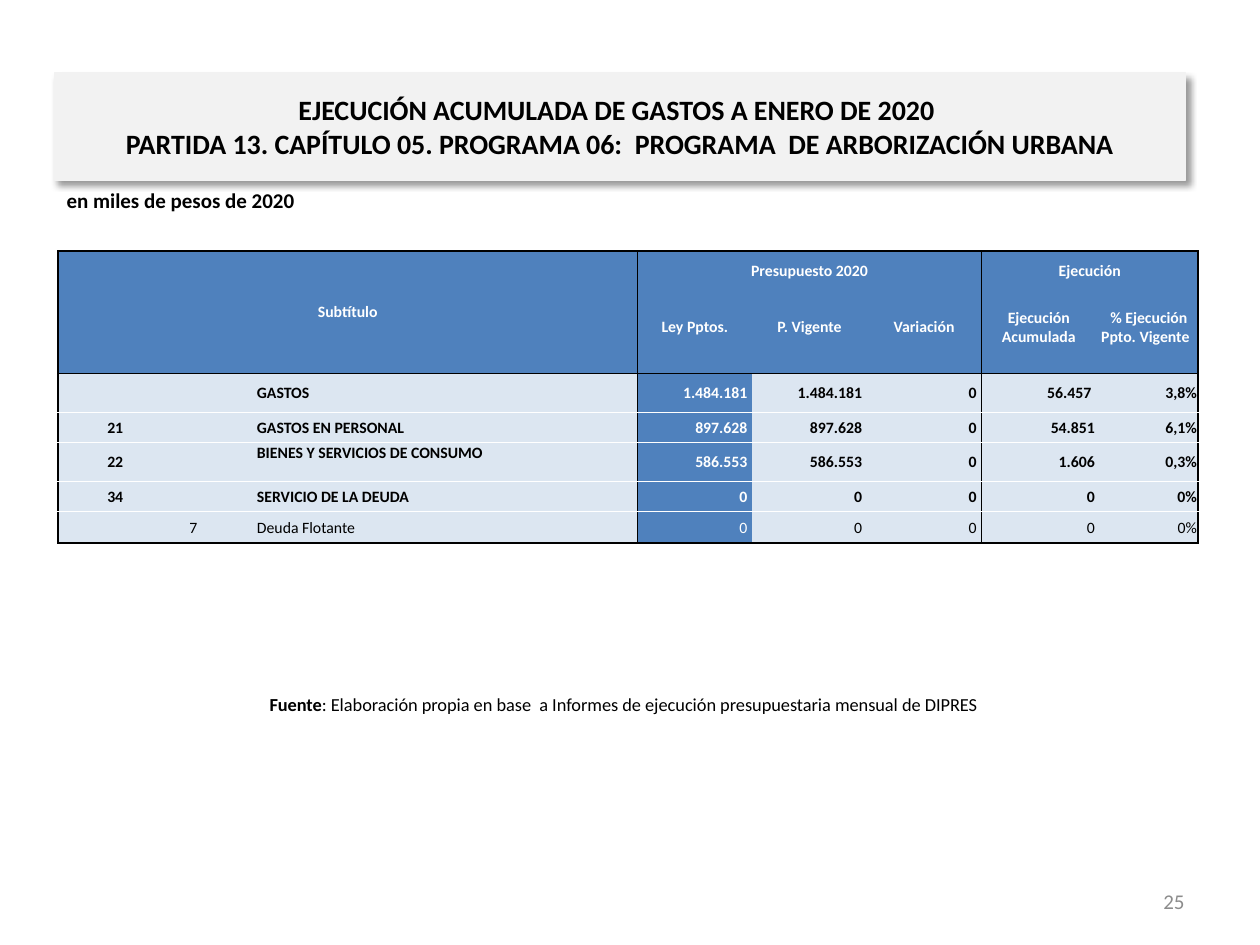
from dataclasses import dataclass

from lxml.etree import SubElement
from pptx import Presentation
from pptx.dml.color import RGBColor as RGB
from pptx.enum.text import MSO_ANCHOR as ANCHOR, MSO_AUTO_SIZE as FIT, PP_ALIGN as ALIGN
from pptx.oxml import parse_xml
from pptx.oxml.ns import nsdecls, qn
from pptx.util import Inches, Pt


@dataclass(frozen=True)
class Theme:
    """Colours, font and type sizes of the slide."""
    font: str = "Calibri"
    black: str = "000000"
    white: str = "FFFFFF"
    grey: str = "8C8C8C"
    panel: str = "F2F2F2"
    blue: str = "4F81BD"
    pale: str = "DCE6F1"
    title: float = 16
    body: float = 12
    source: float = 10.5
    cell: float = 9


THEME = Theme()
COLS = [0.91, 0.33, 0.33, 3.03, 0.91, 0.91, 0.91, 0.91, 0.81]
ROWS = [0.24, 0.73, 0.31, 0.24, 0.31, 0.24, 0.25]
HEADER_ROWS = 2
NAME_COL, LAW_COL = 3, 4
SPANS = [(0, 0, 1, 3), (0, 4, 0, 6), (0, 7, 0, 8)]
DATA = [
    ["Subtítulo", "", "", "", "Presupuesto 2020", "", "", "Ejecución", ""],
    ["", "", "", "", "Ley Pptos.", "P. Vigente", "Variación",
     "Ejecución Acumulada", " % Ejecución Ppto. Vigente "],
    ["", "", "", "GASTOS", "1.484.181 ", "1.484.181 ", "0 ", "56.457 ", "3,8%"],
    ["21", "", "", "GASTOS EN PERSONAL", "897.628 ", "897.628 ", "0 ", "54.851", "6,1%"],
    ["22", "", "", "BIENES Y SERVICIOS DE CONSUMO", "586.553 ", "586.553 ", "0 ", "1.606", "0,3%"],
    ["34", "", "", "SERVICIO DE LA DEUDA", "0 ", "0 ", "0 ", "0", "0%"],
    ["", "7", "", "Deuda Flotante", "0 ", "0 ", "0 ", "0", "0%"],
]
DETAIL_ROW = 6
WRAPPED_ROW = 4
OUTER, INNER, RULE = (THEME.black, 1), (THEME.black, 0.5), (THEME.white, 0.5)
V_EDGES = {0: OUTER, 4: INNER, 7: INNER, 9: OUTER}
H_EDGES = {0: OUTER, 2: INNER, 3: RULE, 4: RULE, 5: RULE, 6: RULE, 7: OUTER}


def write(tf, text, size, color=THEME.black, bold=False, align=ALIGN.LEFT, anchor=ANCHOR.MIDDLE):
    """Add formatted text to the first paragraph of a text frame."""
    tf.word_wrap = True
    tf.vertical_anchor = anchor
    p = tf.paragraphs[0]
    p.alignment = align
    if not text:
        SubElement(p._p, qn("a:endParaRPr"), sz=str(int(size * 100)))
        return
    for i, part in enumerate(text.split("\n")):
        if i:
            p.add_line_break()
        r = p.add_run()
        r.text = part
        r.font.name, r.font.size, r.font.bold = THEME.font, Pt(size), bold
        r.font.color.rgb = RGB.from_string(color)


def set_borders(cell, edges):
    """Draw the left, right, top and bottom borders of a cell."""
    tc_pr = cell._tc.get_or_add_tcPr()
    for i, (side, edge) in enumerate(zip("LRTB", edges)):
        color, width = edge or (None, 0)
        fill = f'<a:solidFill><a:srgbClr val="{color}"/></a:solidFill>' if edge else "<a:noFill/>"
        tc_pr.insert(i, parse_xml(
            f'<a:ln{side} {nsdecls("a")} w="{int(Pt(width))}">{fill}</a:ln{side}>'))


class Deck:
    """Hold the theme and the current slide, and add its elements."""

    def __init__(self, prs, theme):
        """Start a slide with a title only."""
        self.theme = theme
        self.s = prs.slides.add_slide(prs.slide_layouts[5])

    def title(self, text, box):
        """Fill the title placeholder as a shadowed panel."""
        sp, t = self.s.shapes.title, self.theme
        sp.left, sp.top, sp.width, sp.height = map(Inches, box)
        sp.fill.solid()
        sp.fill.fore_color.rgb = RGB.from_string(t.panel)
        sp.line.color.rgb = RGB.from_string(t.panel)
        sp.line.width = Pt(0.75)
        sp._element.spPr.append(parse_xml(
            f'<a:effectLst {nsdecls("a")}><a:outerShdw blurRad="{int(Pt(4))}" '
            f'dist="{int(Pt(3))}" dir="2700000" algn="tl" rotWithShape="0">'
            f'<a:srgbClr val="{t.black}"><a:alpha val="40000"/></a:srgbClr>'
            '</a:outerShdw></a:effectLst>'))
        sp.text_frame.auto_size = FIT.NONE
        write(sp.text_frame, text, t.title, bold=True, align=ALIGN.CENTER)

    def text(self, text, box, size, **fmt):
        """Add a text box and return its text frame."""
        tf = self.s.shapes.add_textbox(*map(Inches, box)).text_frame
        write(tf, text, size, **fmt)
        return tf

    def table(self, data, left, top):
        """Add the budget table."""
        tbl = self.s.shapes.add_table(len(ROWS), len(COLS), Inches(left), Inches(top),
                                      Inches(sum(COLS)), Inches(sum(ROWS))).table
        tbl.first_row = tbl.horz_banding = False
        for col, width in zip(tbl.columns, COLS):
            col.width = Inches(width)
        for row, height in zip(tbl.rows, ROWS):
            row.height = Inches(height)
        for r1, c1, r2, c2 in SPANS:
            tbl.cell(r1, c1).merge(tbl.cell(r2, c2))
        for r, row in enumerate(data):
            for c, text in enumerate(row):
                self.cell(tbl.cell(r, c), text, r, c)

    def cell(self, cell, text, r, c):
        """Format one table cell by its row and column."""
        t, header = self.theme, r < HEADER_ROWS
        dark = header or c == LAW_COL
        cell.margin_left = cell.margin_right = cell.margin_top = Inches(0.01)
        cell.margin_bottom = 0
        cell.fill.solid()
        cell.fill.fore_color.rgb = RGB.from_string(t.blue if dark else t.pale)
        if header or c < NAME_COL:
            align = ALIGN.CENTER
        else:
            align = ALIGN.JUSTIFY if c == NAME_COL else ALIGN.RIGHT
        anchor = ANCHOR.MIDDLE
        if r == 0 and c >= LAW_COL:
            anchor = ANCHOR.BOTTOM
        elif (r, c) == (WRAPPED_ROW, NAME_COL):
            anchor = ANCHOR.TOP
        write(cell.text_frame, text, t.cell, color=t.white if dark else t.black,
              bold=r != DETAIL_ROW, align=align)
        cell.vertical_anchor = anchor
        set_borders(cell, [V_EDGES.get(c), V_EDGES.get(c + cell.span_width),
                           H_EDGES.get(r), H_EDGES.get(r + cell.span_height)])


def main():
    """Build and save the slide."""
    prs = Presentation()
    prs.slide_width, prs.slide_height = Inches(10), Inches(7.5)
    d = Deck(prs, THEME)
    d.title("EJECUCIÓN ACUMULADA DE GASTOS A ENERO DE 2020 \n"
            "PARTIDA 13. CAPÍTULO 05. PROGRAMA 06:  PROGRAMA  DE ARBORIZACIÓN URBANA",
            (0.43, 0.58, 8.98, 0.85))
    d.text("en miles de pesos de 2020", (0.43, 1.44, 8.19, 0.34), THEME.body,
           bold=True, anchor=ANCHOR.TOP)
    d.table(DATA, 0.46, 1.99)
    tf = d.text("Fuente", (0.46, 5.42, 8.98, 0.34), THEME.source, bold=True, align=ALIGN.CENTER)
    write(tf, ": Elaboración propia en base  a Informes de ejecución presupuestaria mensual de DIPRES",
          THEME.source, align=ALIGN.CENTER)
    d.text("25", (7.17, 6.95, 2.33, 0.4), THEME.body, color=THEME.grey, align=ALIGN.RIGHT)
    prs.save("out.pptx")


if __name__ == "__main__":
    main()
